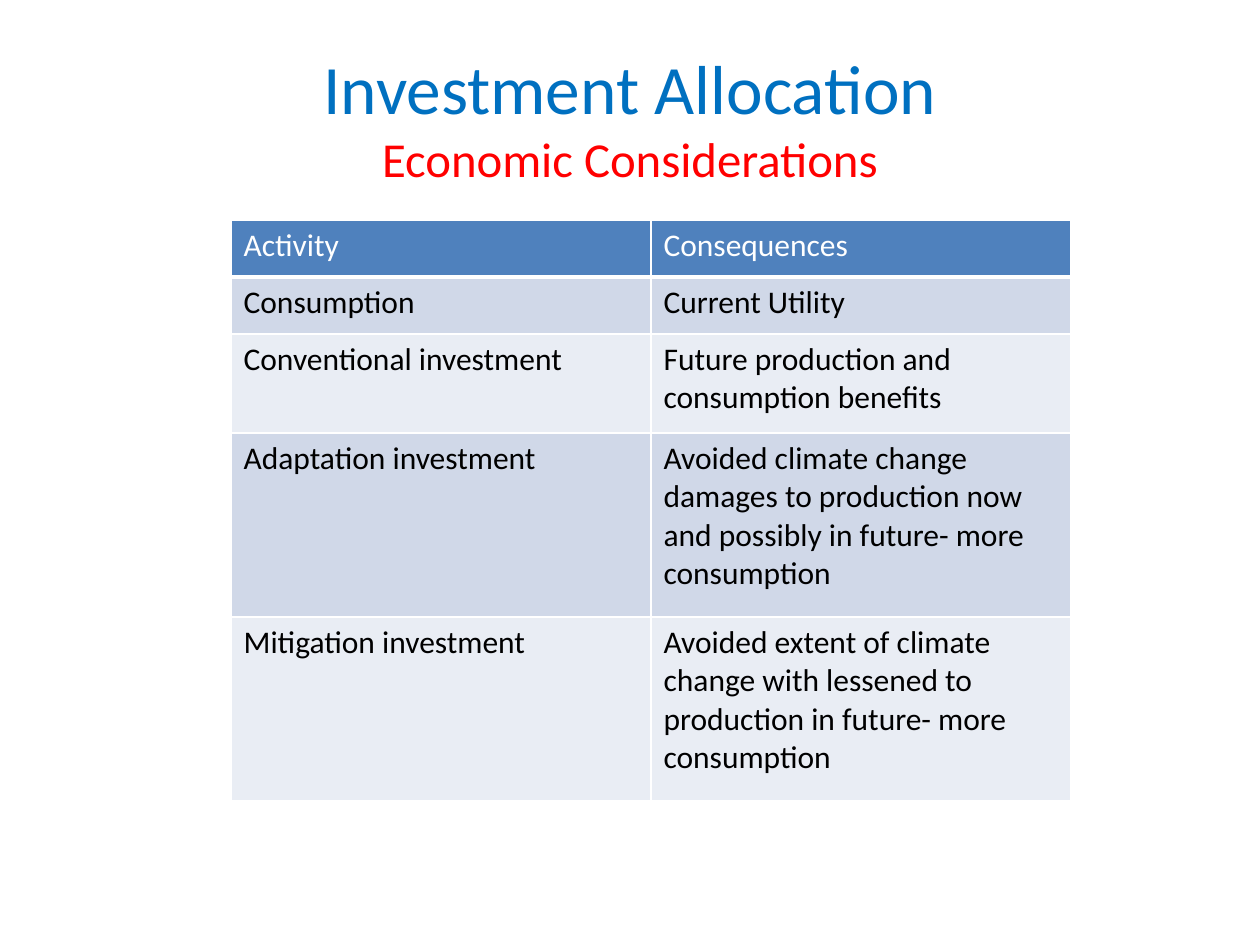
"""Builds the slide on the economic consequences of investment allocation."""
from lxml import etree
from pptx import Presentation
from pptx.dml.color import RGBColor
from pptx.enum.text import MSO_ANCHOR, MSO_AUTO_SIZE, PP_ALIGN
from pptx.oxml.ns import qn
from pptx.util import Pt

MIDDLE = MSO_ANCHOR.MIDDLE
NO_AUTOFIT = MSO_AUTO_SIZE.NONE
CENTER = PP_ALIGN.CENTER

PX = 914400 // 126
FONT = "Calibri"
COLORS = {
    "title": "0070C0", "subtitle": "FF0000", "header": "4F81BD",
    "odd_row": "D0D8E8", "even_row": "E9EDF4",
    "header_text": "FFFFFF", "text": "000000", "border": "FFFFFF",
}
HEADING = [("Investment Allocation", 39.6, "title"),
           ("Economic Considerations", 27.9, "subtitle")]
ACTIVITIES = [
    ("Activity", "Consequences"),
    ("Consumption", "Current Utility"),
    ("Conventional investment", "Future production and consumption benefits"),
    ("Adaptation investment",
     "Avoided climate change damages to production now and possibly in future- more consumption"),
    ("Mitigation investment",
     "Avoided extent of climate change with lessened to production in future- more consumption"),
]
HEADING_BOX = (63, 38, 1134, 157)
TABLE_LEFT, TABLE_TOP, COLUMN_WIDTH = 231, 220, 420
ROW_HEIGHTS = [57, 57, 99, 184, 184]


def px(*lengths):
    return [length * PX for length in lengths]


def style_run(run, size, color):
    run.font.name = FONT
    run.font.size = Pt(size)
    run.font.bold = False
    run.font.color.rgb = RGBColor.from_string(COLORS[color])


def add_border(properties, side, width):
    line = etree.SubElement(properties, qn(f"a:{side}"), w=str(Pt(width)))
    fill = etree.SubElement(line, qn("a:solidFill"))
    etree.SubElement(fill, qn("a:srgbClr"), val=COLORS["border"])


def style_cell(cell, row):
    is_header = row == 0
    properties = cell._tc.get_or_add_tcPr()
    widths = {"lnL": 1, "lnR": 1, "lnT": 3 if row == 1 else 1, "lnB": 3 if is_header else 1}
    for side, width in widths.items():
        add_border(properties, side, width)
    band = "header" if is_header else "odd_row" if row % 2 else "even_row"
    cell.fill.solid()
    cell.fill.fore_color.rgb = RGBColor.from_string(COLORS[band])
    style_run(cell.text_frame.paragraphs[0].runs[0], 18, "header_text" if is_header else "text")


def add_heading(slide):
    heading = slide.shapes.title
    heading.left, heading.top, heading.width, heading.height = px(*HEADING_BOX)
    frame = heading.text_frame
    frame.text = "\v".join(line for line, _, _ in HEADING)
    frame.auto_size = NO_AUTOFIT
    frame.vertical_anchor = MIDDLE
    paragraph = frame.paragraphs[0]
    paragraph.alignment = CENTER
    for run, (_, size, color) in zip(paragraph.runs, HEADING):
        style_run(run, size, color)


def add_activities(slide):
    columns = len(ACTIVITIES[0])
    box = px(TABLE_LEFT, TABLE_TOP, columns * COLUMN_WIDTH, sum(ROW_HEIGHTS))
    table = slide.shapes.add_table(len(ACTIVITIES), columns, *box).table
    for row, (texts, height) in enumerate(zip(ACTIVITIES, ROW_HEIGHTS)):
        table.rows[row].height = height * PX
        for column, text in enumerate(texts):
            cell = table.cell(row, column)
            cell.text = text
            style_cell(cell, row)


def main():
    deck = Presentation()
    deck.slide_width, deck.slide_height = px(1260, 945)
    slide = deck.slides.add_slide(deck.slide_layouts[5])
    add_heading(slide)
    add_activities(slide)
    deck.save("out.pptx")


if __name__ == "__main__":
    main()
